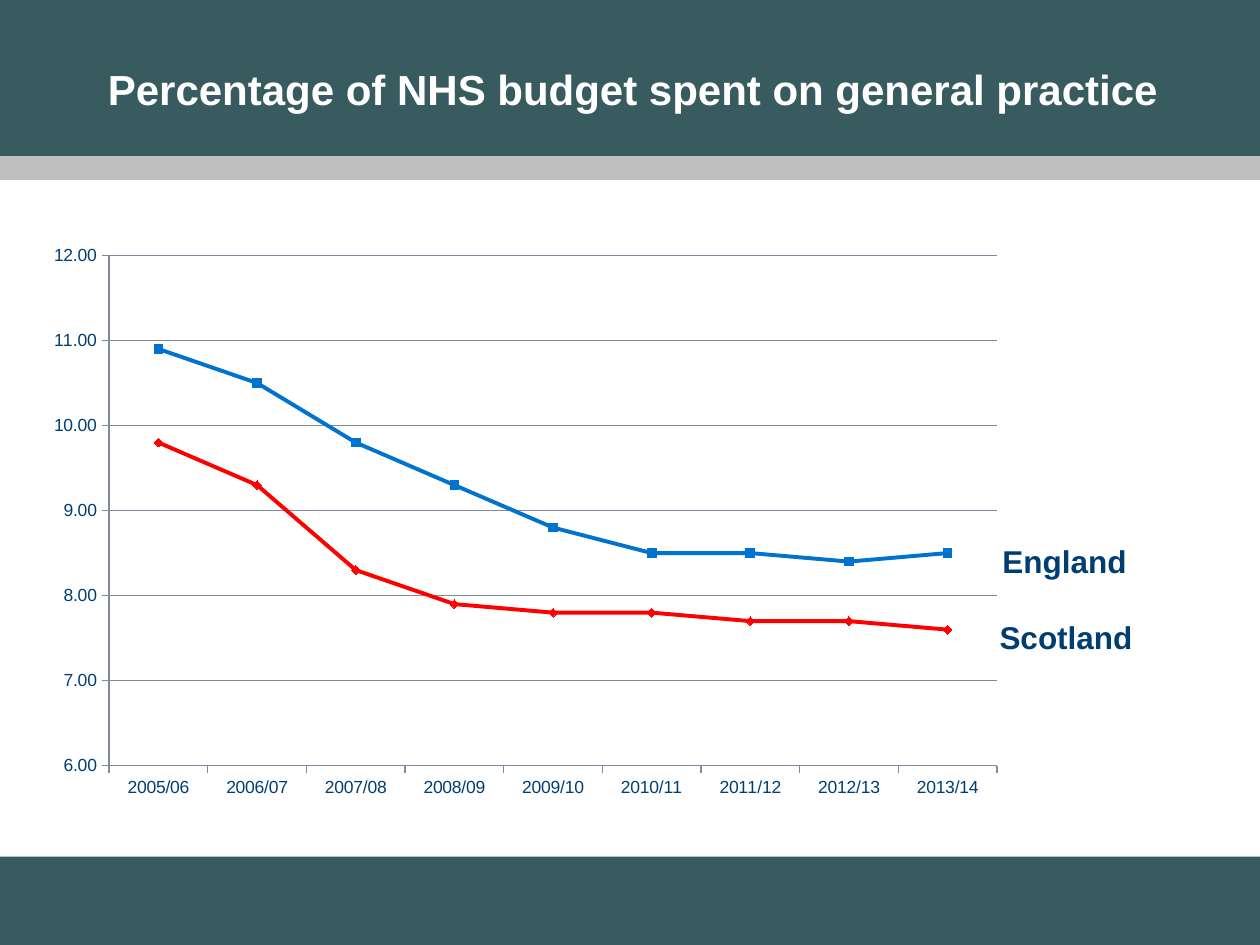
import pptx
import pptx.chart.data
import pptx.dml.color
import pptx.enum.chart
import pptx.enum.shapes
import pptx.enum.text
import pptx.oxml
import pptx.oxml.ns
import pptx.util
from pptx.util import Cm

RGBColor = pptx.dml.color.RGBColor
TEAL = RGBColor(0x37, 0x5B, 0x5E)
GREY = RGBColor(0xBF, 0xBF, 0xBF)
NAVY = RGBColor(0x00, 0x3E, 0x72)
BLUE = RGBColor(0x00, 0x73, 0xCF)
RED = RGBColor(0xFF, 0x00, 0x00)
WHITE = RGBColor(0xFF, 0xFF, 0xFF)
AXIS_GREY = RGBColor(0x80, 0x8A, 0x9C)

SLIDE_WIDTH, SLIDE_HEIGHT = Cm(25.4), Cm(19.05)
CHART_WIDTH, CHART_HEIGHT = Cm(19.81), Cm(11.61)
# Inner plot area as fractions of the chart frame
PLOT_AREA = {
    "x": Cm(1.49) / CHART_WIDTH,
    "y": Cm(0.43) / CHART_HEIGHT,
    "w": Cm(17.9) / CHART_WIDTH,
    "h": Cm(10.29) / CHART_HEIGHT,
}
YEARS = [f"{year}/{(year + 1) % 100:02d}" for year in range(2005, 2014)]
MARKERS = pptx.enum.chart.XL_MARKER_STYLE
# Name, values, colour, marker style
SERIES = [
    ("Series 1", (10.9, 10.5, 9.8, 9.3, 8.8, 8.5, 8.5, 8.4, 8.5),
     BLUE, MARKERS.SQUARE),
    ("Series 2", (9.8, 9.3, 8.3, 7.9, 7.8, 7.8, 7.7, 7.7, 7.6),
     RED, MARKERS.DIAMOND),
]


def set_attributes(target, values):
    for name, value in values.items():
        setattr(target, name, value)


def add_band(slide, top, height, color):
    band = slide.shapes.add_shape(
        pptx.enum.shapes.MSO_SHAPE.RECTANGLE, 0, top, SLIDE_WIDTH, height)
    band.shadow.inherit = False
    band.fill.solid()
    band.fill.fore_color.rgb = color
    band.line.fill.background()


def write_text(box, text, size, color):
    frame = box.text_frame
    set_attributes(frame, {
        "word_wrap": False,
        "auto_size": pptx.enum.text.MSO_AUTO_SIZE.SHAPE_TO_FIT_TEXT,
        "vertical_anchor": pptx.enum.text.MSO_ANCHOR.TOP,
    })
    para = frame.paragraphs[0]
    para.alignment = pptx.enum.text.PP_ALIGN.LEFT
    span = para.add_run()
    span.text = text
    set_attributes(span.font, {
        "name": "Arial", "size": pptx.util.Pt(size), "bold": True})
    span.font.color.rgb = color


def format_title(slide, text):
    title = slide.shapes.title
    set_attributes(title, {"left": Cm(1.92), "top": Cm(1.15),
                           "width": Cm(21.87), "height": Cm(1.27)})
    write_text(title, text, 24, WHITE)
    # The title lies above the header band.
    slide.shapes.element.append(title.element)


def add_series_label(slide, text, left, top, width):
    box = slide.shapes.add_textbox(left, top, width, Cm(1.02))
    write_text(box, text, 18, NAVY)


def format_line(line, color, width):
    line.color.rgb = color
    line.width = pptx.util.Pt(width)


def place_plot_area(chart):
    """Give the inner plot area a fixed place in the chart frame."""
    plot_area = chart.element.find(".//" + pptx.oxml.ns.qn("c:plotArea"))
    for layout in plot_area.findall(pptx.oxml.ns.qn("c:layout")):
        plot_area.remove(layout)
    parts = '<c:layoutTarget val="inner"/><c:xMode val="edge"/><c:yMode val="edge"/>'
    parts += "".join(f'<c:{key} val="{value}"/>' for key, value in PLOT_AREA.items())
    plot_area.insert(0, pptx.oxml.parse_xml(
        f'<c:layout {pptx.oxml.ns.nsdecls("c")}>'
        f"<c:manualLayout>{parts}</c:manualLayout></c:layout>"))


def format_axes(chart):
    for axis in (chart.category_axis, chart.value_axis):
        axis.major_tick_mark = pptx.enum.chart.XL_TICK_MARK.OUTSIDE
        format_line(axis.format.line, AXIS_GREY, 0.75)
    set_attributes(chart.value_axis, {
        "minimum_scale": 6, "maximum_scale": 12, "major_unit": 1,
        "has_major_gridlines": True})
    format_line(chart.value_axis.major_gridlines.format.line, AXIS_GREY, 0.75)
    set_attributes(chart.value_axis.tick_labels, {
        "number_format": "0.00", "number_format_is_linked": False})


def add_spending_chart(slide):
    chart_data = pptx.chart.data.CategoryChartData(number_format="0.00")
    chart_data.categories = YEARS
    for name, values, *_ in SERIES:
        chart_data.add_series(name, values)
    chart = slide.shapes.add_chart(
        pptx.enum.chart.XL_CHART_TYPE.LINE_MARKERS,
        Cm(0.71), Cm(4.72), CHART_WIDTH, CHART_HEIGHT, chart_data).chart
    set_attributes(chart, {"has_legend": False, "has_title": False})
    set_attributes(chart.font, {"name": "Arial", "size": pptx.util.Pt(10)})
    chart.font.color.rgb = NAVY
    chart.plots[0].vary_by_categories = False
    format_axes(chart)
    place_plot_area(chart)
    for series, (_, _, color, style) in zip(chart.plots[0].series, SERIES):
        series.smooth = False
        format_line(series.format.line, color, 2.25)
        set_attributes(series.marker, {"style": style, "size": 5})
        series.marker.format.fill.solid()
        series.marker.format.fill.fore_color.rgb = color
        format_line(series.marker.format.line, color, 0.75)


def main():
    deck = pptx.Presentation()
    set_attributes(deck, {"slide_width": SLIDE_WIDTH, "slide_height": SLIDE_HEIGHT})
    slide = deck.slides.add_slide(deck.slide_layouts.get_by_name("Title Only"))
    add_band(slide, 0, Cm(3.28), TEAL)
    add_band(slide, Cm(3.15), Cm(0.48), GREY)
    add_band(slide, Cm(17.27), Cm(1.78), TEAL)
    add_spending_chart(slide)
    add_series_label(slide, "England", Cm(19.96), Cm(10.8), Cm(3.05))
    add_series_label(slide, "Scotland", Cm(19.9), Cm(12.33), Cm(3.23))
    format_title(slide, "Percentage of NHS budget spent on general practice")
    deck.save("out.pptx")


if __name__ == "__main__":
    main()
